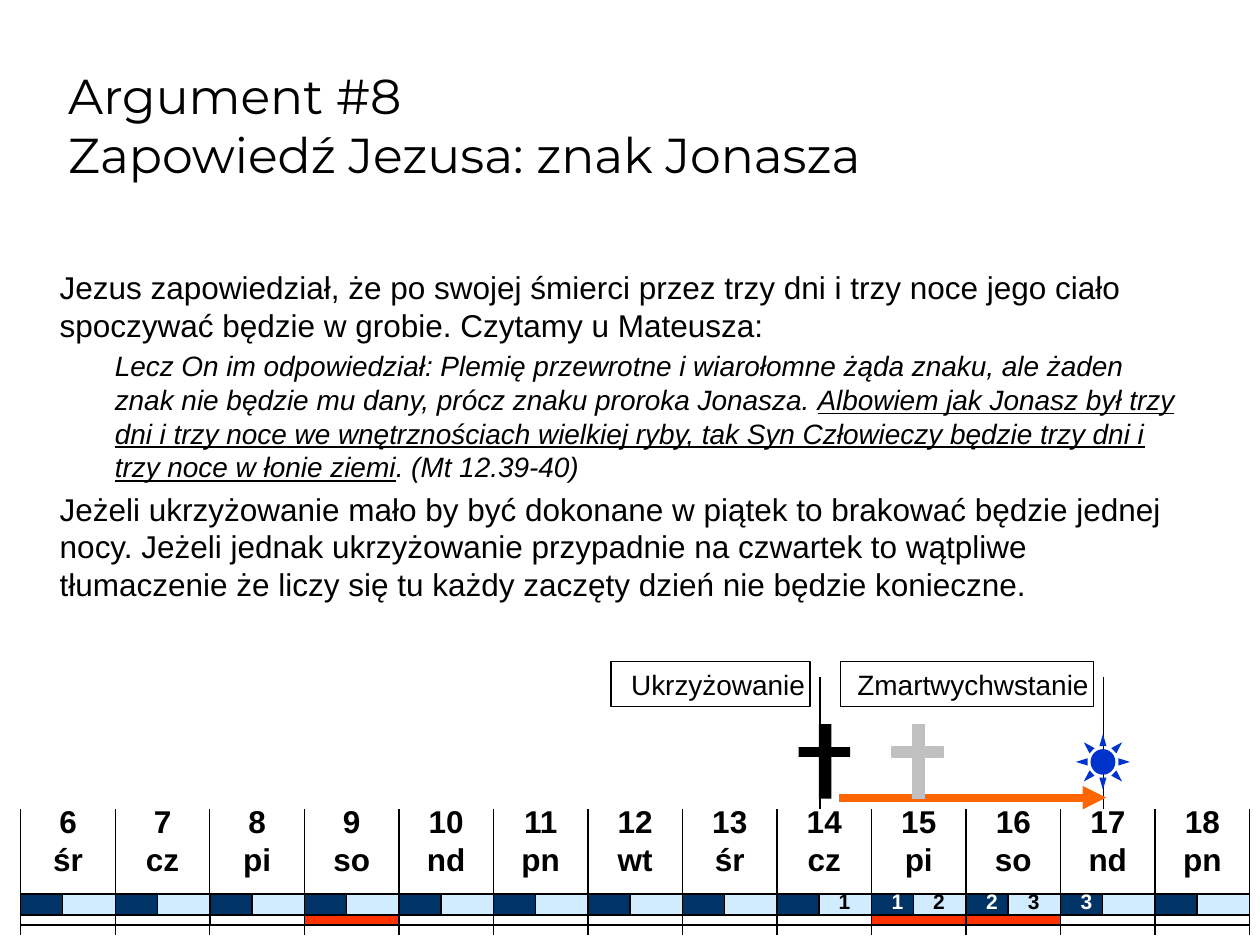
from copy import deepcopy
from pptx import Presentation
from pptx import util as u
from pptx.dml.color import RGBColor
from pptx.enum import shapes, text
from pptx.oxml.ns import qn
from lxml import etree

BLACK = RGBColor(0x00, 0x00, 0x00)
WHITE = RGBColor(0xFF, 0xFF, 0xFF)
NAVY = RGBColor(0x00, 0x33, 0x66)
PALE = RGBColor(0xD1, 0xEB, 0xFF)
RED = RGBColor(0xFF, 0x33, 0x00)
BLUE = RGBColor(0x00, 0x33, 0xCC)
ORANGE = RGBColor(0xFF, 0x66, 0x00)
GREY = RGBColor(0xC0, 0xC0, 0xC0)

FORM = shapes.MSO_SHAPE
ALIGN = text.PP_ALIGN
MID = text.MSO_ANCHOR.MIDDLE

WEEK = ["śr", "cz", "pi", "so", "nd", "pn", "wt"]
FIRST, COUNT = 6, 13
FEASTS = {9, 15, 16}
NIGHTS = {15: "1", 16: "2", 17: "3"}
DAYS = {14: "1", 15: "2", 16: "3"}


def write(par, words, size=18, color=BLACK, font="Arial", align=None, **style):
    if align is not None:
        par.alignment = align
    for n, line in enumerate(words.split("\n")):
        if n:
            par.add_line_break()
        run = par.add_run()
        run.text = line
        run.font.size = u.Pt(size)
        run.font.name = font
        run.font.color.rgb = color
        for key, val in style.items():
            setattr(run.font, key, val)
        if n:
            run._r.getprevious().insert(0, deepcopy(run._r.rPr))


def place(shape, box):
    shape.left, shape.top, shape.width, shape.height = [u.Cm(v) for v in box]


def draw(slide, kind, box, fill=None, line=None):
    shape = slide.shapes.add_shape(kind, *[u.Cm(v) for v in box])
    shape.shadow.inherit = False
    if fill is None:
        shape.fill.background()
    else:
        shape.fill.solid()
        shape.fill.fore_color.rgb = fill
    if line is None:
        shape.line.fill.background()
    else:
        shape.line.color.rgb = line
        shape.line.width = u.Pt(0.75)
    return shape


def rule(slide, start, end, color=BLACK, width=0.75):
    line = slide.shapes.add_connector(
        shapes.MSO_CONNECTOR.STRAIGHT, *[u.Cm(v) for v in start + end])
    line.line.color.rgb = color
    line.line.width = u.Pt(width)
    etree.SubElement(line._element.spPr, qn("a:effectLst"))
    return line


def label(slide, box, words, wrap=True, anchor=None, **style):
    frame = slide.shapes.add_textbox(*[u.Cm(v) for v in box]).text_frame
    frame.word_wrap = wrap
    if anchor is not None:
        frame.vertical_anchor = anchor
    write(frame.paragraphs[0], words, align=ALIGN.CENTER, bold=True, **style)


def title(slide, box):
    shape = slide.shapes.title
    place(shape, box)
    frame = shape.text_frame
    frame.auto_size = text.MSO_AUTO_SIZE.NONE
    frame.vertical_anchor = text.MSO_ANCHOR.BOTTOM
    write(frame.paragraphs[0], "Argument #8\nZapowiedź Jezusa: znak Jonasza",
          size=28, font="Montserrat", align=ALIGN.LEFT)


def indent(par, left, level=0, before=0):
    par.level = level
    par.space_before = u.Pt(before)
    props = par._p.get_or_add_pPr()
    props.set("marL", str(u.Cm(left)))
    props.set("indent", "0")
    etree.SubElement(props, qn("a:buNone"))


def body(slide, box):
    shape = slide.placeholders[1]
    place(shape, box)
    frame = shape.text_frame
    frame.auto_size = text.MSO_AUTO_SIZE.NONE
    intro = frame.paragraphs[0]
    indent(intro, 0.95)
    write(intro, "Jezus zapowiedział, że po swojej śmierci przez trzy dni i trzy noce "
          "jego ciało spoczywać będzie w grobie. Czytamy u Mateusza:")
    quote = frame.add_paragraph()
    indent(quote, 2.06, level=1, before=3.2)
    write(quote, "Lecz On im odpowiedział: Plemię przewrotne i wiarołomne żąda znaku, "
          "ale żaden znak nie będzie mu dany, prócz znaku proroka Jonasza. ",
          size=16, italic=True)
    write(quote, "Albowiem jak Jonasz był trzy dni i trzy noce we wnętrznościach "
          "wielkiej ryby, tak Syn Człowieczy będzie trzy dni i trzy noce w łonie ziemi",
          size=16, italic=True, underline=True)
    write(quote, ". (Mt 12.39‑40)", size=16, italic=True)
    close = frame.add_paragraph()
    indent(close, 0.95, before=3.6)
    write(close, "Jeżeli ukrzyżowanie mało by być dokonane w piątek to brakować będzie "
          "jednej nocy. Jeżeli jednak ukrzyżowanie przypadnie na czwartek to wątpliwe "
          "tłumaczenie że liczy się tu każdy zaczęty dzień nie będzie konieczne.")


def callout(slide, box, words, gap):
    shape = draw(slide, FORM.LINE_CALLOUT_1, box, line=BLACK)
    shape._element.spPr.find(qn("a:xfrm")).set("flipH", "1")
    for n, val in enumerate((0.35, -gap, 3.27, -gap)):
        shape.adjustments[n] = val
    frame = shape.text_frame
    frame.word_wrap = True
    frame.vertical_anchor = MID
    frame.margin_left = frame.margin_right = u.Cm(0.1)
    frame.margin_top = frame.margin_bottom = u.Cm(0.1)
    write(frame.paragraphs[0], words, size=16, align=ALIGN.RIGHT)


def cross(slide, box, color, line=None):
    left, top, wide, high = box
    draw(slide, FORM.RECTANGLE, (left + 0.41, top, 0.25, high), color, line)
    draw(slide, FORM.RECTANGLE, (left, top + 0.46, wide, 0.2), color, line)


def dates(slide, box):
    left, top, wide, high = box
    step = wide / COUNT
    night = step * 4 / 9
    bar = top + 2.14
    for n in range(COUNT):
        x = left + n * step
        day = FIRST + n
        draw(slide, FORM.RECTANGLE, (x, bar, night, 0.43), NAVY, BLACK)
        draw(slide, FORM.RECTANGLE, (x + night, bar, step - night, 0.43), PALE, BLACK)
        draw(slide, FORM.RECTANGLE, (x, bar + 0.43, step, 0.2),
             RED if day in FEASTS else None, BLACK)
        label(slide, (x, top, step, 2.12), f"{day}\n{WEEK[n % 7]}",
              wrap=False, anchor=MID)
    for n in range(COUNT + 1):
        x = left + n * step
        rule(slide, (x, top + high), (x, top + 0.43))


def counts(slide, box):
    left, top, wide, high = box
    step = wide / COUNT
    for marks, shift, color in ((DAYS, 0.41, BLACK), (NIGHTS, -0.43, WHITE)):
        for day, mark in marks.items():
            x = left + (day - FIRST) * step + shift
            label(slide, (x, top, step, high), mark, size=12, color=color)


def events(slide, box):
    left, top = box[:2]
    sun = draw(slide, FORM.SUN, (left + 5.59, top + 0.2, 1.09, 1.12), BLUE)
    sun.adjustments[0] = 0.27
    cross(slide, (left, top, 1.04, 1.5), BLACK)
    arrow = rule(slide, (left + 0.82, top + 1.48), (left + 6.2, top + 1.48), ORANGE, 4.5)
    etree.SubElement(arrow.line._get_or_add_ln(), qn("a:tailEnd"), type="triangle")
    cross(slide, (left + 1.88, top, 1.04, 1.5), GREY, GREY)


def main():
    deck = Presentation()
    deck.slide_width, deck.slide_height = u.Cm(25.4), u.Cm(19.05)
    slide = deck.slides.add_slide(deck.slide_layouts[1])
    title(slide, (1.12, 0.64, 21.59, 3.18))
    body(slide, (0, 5.27, 23.98, 7.65))
    callout(slide, (12.32, 13.34, 4.01, 0.91), "Ukrzyżowanie", 0.05)
    callout(slide, (16.94, 13.34, 5.11, 0.91), "Zmartwychwstanie", 0.04)
    dates(slide, (0.42, 15.88, 24.77, 2.97))
    events(slide, (16.1, 14.6, 6.68, 1.5))
    counts(slide, (0.42, 17.79, 24.77, 0.76))
    deck.save("out.pptx")


if __name__ == "__main__":
    main()
